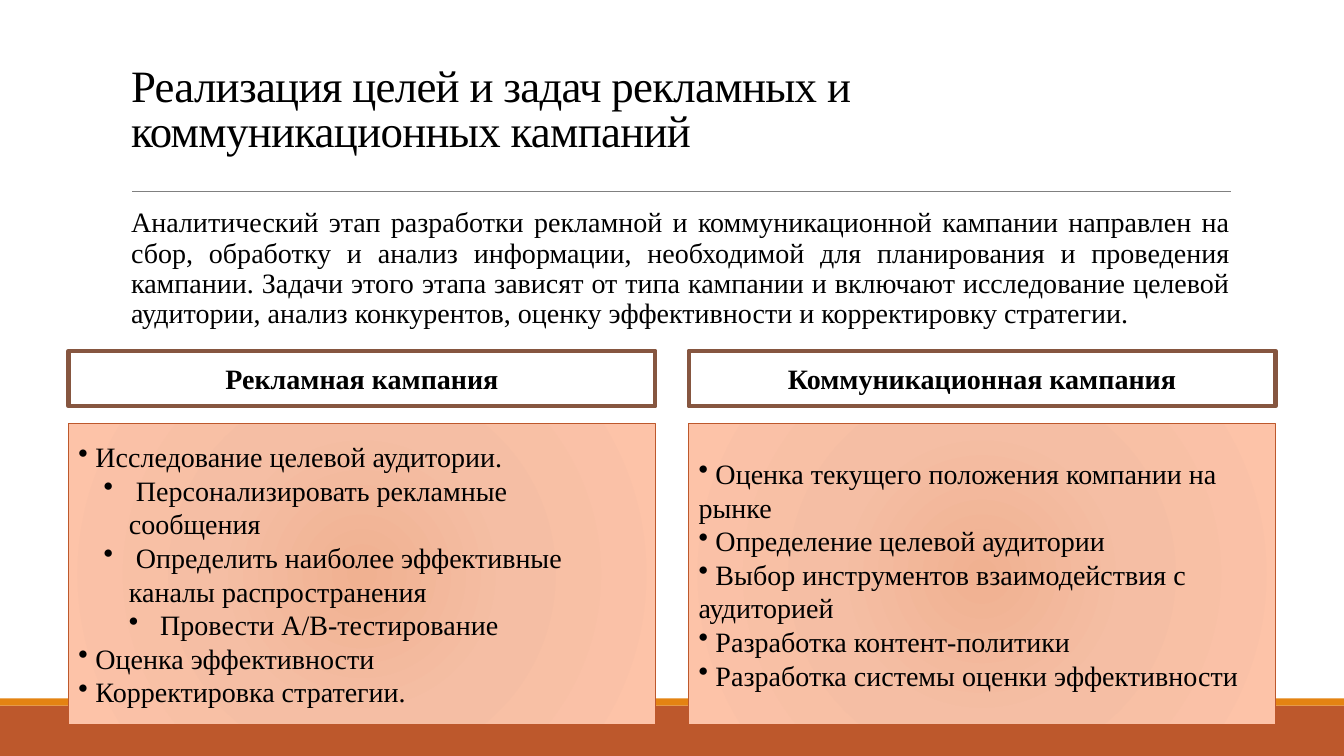
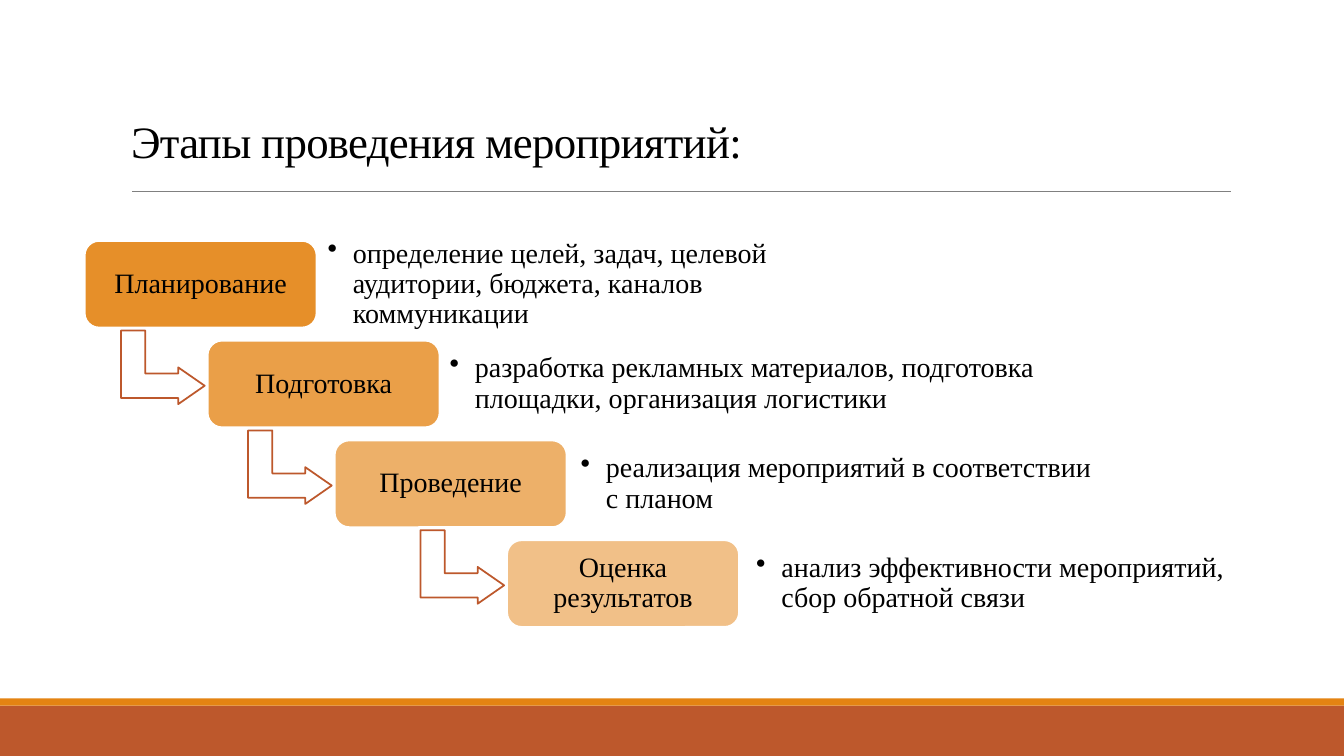
from pptx import Presentation
from pptx.dml.color import RGBColor
from pptx.enum.shapes import MSO_CONNECTOR, MSO_SHAPE
from pptx.enum.text import MSO_ANCHOR, MSO_AUTO_SIZE, PP_ALIGN
from pptx.oxml import parse_xml
from pptx.oxml.ns import nsdecls, qn
from pptx.util import Inches, Pt

RECT, ROUND = MSO_SHAPE.RECTANGLE, MSO_SHAPE.ROUNDED_RECTANGLE
ARROW = MSO_SHAPE.BENT_UP_ARROW
LINE = MSO_CONNECTOR.STRAIGHT
LEFT, CENTER, JUST = PP_ALIGN.LEFT, PP_ALIGN.CENTER, PP_ALIGN.JUSTIFY
TOP, MIDDLE, BOTTOM = MSO_ANCHOR.TOP, MSO_ANCHOR.MIDDLE, MSO_ANCHOR.BOTTOM
FIXED = MSO_AUTO_SIZE.NONE

COLORS = {
    "rust": "BD582C", "orange": "E48312", "brown": "865640",
    "gray": "808080", "white": "FFFFFF", "black": "000000",
}
GLOW = [(0, "F0B191"), (45, "F5BEA4"), (100, "FDC3A8")]

TEXT = {"name": "Times New Roman", "size": Pt(20)}
HEAD = TEXT | {"size": Pt(32)}
BOLD = TEXT | {"bold": True}

# Bullet kinds: level, left margin, first-line indent
FLAT, SUB, DEEP, NOTE = (0, 0, 0), (1, 0.5, -0.25), (1, 0.81, -0.31), (1, 0.25, -0.25)

INTRO = (
    "Аналитический этап разработки рекламной и коммуникационной кампании "
    "направлен на сбор, обработку и анализ информации, необходимой для "
    "планирования и проведения кампании. Задачи этого этапа зависят от типа "
    "кампании и включают исследование целевой аудитории, анализ конкурентов, "
    "оценку эффективности и корректировку стратегии."
)
PANELS = [
    ("Рекламная кампания", [
        (" Исследование целевой аудитории.", FLAT),
        (" Персонализировать рекламные сообщения", SUB),
        (" Определить наиболее эффективные каналы распространения", SUB),
        ("Провести A/B-тестирование", DEEP),
        (" Оценка эффективности", FLAT),
        (" Корректировка стратегии.", FLAT),
    ]),
    ("Коммуникационная кампания", [
        (" Оценка текущего положения компании на рынке", FLAT),
        (" Определение целевой аудитории", FLAT),
        (" Выбор инструментов взаимодействия с аудиторией", FLAT),
        (" Разработка контент-политики", FLAT),
        (" Разработка системы оценки эффективности", FLAT),
    ]),
]
# Step: label, left, opacity, note left, note width, note
STEPS = [
    ("Планирование", 0.84, 90, 3.17, 5.39,
     "определение целей, задач, целевой аудитории, бюджета, каналов коммуникации"),
    ("Подготовка", 2.06, 77, 4.38, 6,
     "разработка рекламных материалов, подготовка площадки, организация логистики"),
    ("Проведение", 3.32, 63, 5.68, 5.3,
     "реализация мероприятий в соответствии с планом"),
    ("Оценка результатов", 5.03, 50, 7.42, 4.93,
     "анализ эффективности мероприятий, сбор обратной связи"),
]


def color(name):
    return RGBColor.from_string(COLORS[name])


def apply(obj, values):
    for key, value in values.items():
        setattr(obj, key, value)


def place(shape, box):
    keys = ("left", "top", "width", "height")
    apply(shape, dict(zip(keys, map(Inches, box))))


def indent(para, kind, mark):
    """Set the level, margins and bullet of a paragraph."""
    level, margin, first = kind
    para.level = level
    props = para._p.get_or_add_pPr()
    props.set("marL", str(Inches(margin)))
    props.set("indent", str(Inches(first)))
    tag = f'a:buChar {nsdecls("a")} char="{mark}"' if mark else f'a:buNone {nsdecls("a")}'
    props.append(parse_xml(f"<{tag}/>"))


def write(shape, items, font=TEXT, align=LEFT, anchor=MIDDLE, space=None, mark="•", pad=None):
    """Fill a shape with (text, bullet kind) items; kind None has no bullet."""
    frame = shape.text_frame
    apply(frame, {"word_wrap": True, "auto_size": FIXED, "vertical_anchor": anchor})
    if pad is not None:
        across, down = pad
        apply(frame, {"margin_left": Inches(across), "margin_right": Inches(across),
                      "margin_top": Inches(down), "margin_bottom": Inches(down)})
    for i, (text, kind) in enumerate(items):
        para = frame.add_paragraph() if i else frame.paragraphs[0]
        if kind:
            indent(para, kind, mark)
        apply(para, {"alignment": align, "line_spacing": space, "space_before": Pt(0)})
        run = para.add_run()
        run.text = text
        apply(run.font, font)
        run.font.color.rgb = color("black")


def draw(slide, form, box, fill=None, line=None, width=1.0):
    """Add a preset shape with a plain fill and outline."""
    shape = slide.shapes.add_shape(form, *map(Inches, box))
    shape.shadow.inherit = False
    if fill:
        shape.fill.solid()
        shape.fill.fore_color.rgb = color(fill)
    if line:
        shape.line.color.rgb = color(line)
        shape.line.width = Pt(width)
    else:
        shape.line.fill.background()
    return shape


def glow(shape):
    """Give a shape the radial gradient."""
    stops = "".join(f'<a:gs pos="{at * 1000}"><a:srgbClr val="{tone}"/></a:gs>'
                    for at, tone in GLOW)
    sides = " ".join(f'{side}="100000"' for side in "ltrb")
    shape.fill.background()
    props = shape.element.spPr
    props.replace(props.find(qn("a:noFill")), parse_xml(
        f'<a:gradFill {nsdecls("a")} rotWithShape="1"><a:gsLst>{stops}</a:gsLst>'
        f'<a:path path="circle"><a:fillToRect {sides}/></a:path></a:gradFill>'))


def fade(shape, share):
    """Set the opacity of a solid fill, in percent."""
    tone = shape.element.spPr.find(qn("a:solidFill")).find(qn("a:srgbClr"))
    tone.append(parse_xml(f'<a:alpha {nsdecls("a")} val="{share * 1000}"/>'))


def share(prs, slide):
    """Move the bands and the title rule to the slide master."""
    rule = slide.shapes.add_connector(LINE, *map(Inches, (1.31, 1.9, 12.21, 1.9)))
    rule.line.color.rgb = color("gray")
    rule.line.width = Pt(0.5)
    rule.element.spPr.append(parse_xml(f'<a:effectLst {nsdecls("a")}/>'))
    bands = [draw(slide, RECT, (0, 7, 13.33, 0.5), "rust"),
             draw(slide, RECT, (0, 6.93, 13.33, 0.07), "orange")]
    for num, part in enumerate([*bands, rule], 20):
        part.element.xpath(".//p:cNvPr")[0].set("id", str(num))
        prs.slide_master.shapes.element.append(part.element)


def title(slide, text, height, anchor):
    shape = slide.shapes.title
    place(shape, (1.2, 0.31, 11, height))
    write(shape, [(text, None)], HEAD, anchor=anchor, space=0.85)
    run = shape.text_frame.paragraphs[0].runs[0]
    run._r.get_or_add_rPr().set("spc", "-50")


def goals(slide):
    title(slide, "Реализация целей и задач рекламных и коммуникационных кампаний", 1.59, MIDDLE)
    body = slide.placeholders[1]
    place(body, (1.2, 2.02, 11, 1.46))
    write(body, [(INTRO, (0, 0.1, 0))], align=JUST, anchor=TOP, space=0.9,
          mark=None, pad=(0, 0.05))
    # Two columns: list panel and heading
    for col, (name, items) in enumerate(PANELS):
        left = 0.68 + 6.15 * col
        panel = draw(slide, RECT, (left, 4.2, 5.82, 2.99), line="rust")
        glow(panel)
        write(panel, items)
        head = draw(slide, RECT, (left, 3.48, 5.82, 0.55), "white", "brown", 3)
        write(head, [(name, None)], BOLD, CENTER)


def stages(slide):
    title(slide, "Этапы проведения мероприятий:", 1.4, BOTTOM)
    for row, (name, left, solid, start, width, note) in enumerate(STEPS):
        top = 2.39 + 0.99 * row
        # Arrow from the step above
        if row:
            arrow = draw(slide, ARROW, (left - 0.81, top - 0.15, 0.73, 0.83),
                         "white", "rust", 1.25)
            arrow.rotation = 90
            for i, value in enumerate((0.33, 0.25, 0.36)):
                arrow.adjustments[i] = value
        # Step box and its note
        step = draw(slide, ROUND, (left, top, 2.3, 0.86), "orange", "white", 1.25)
        fade(step, solid)
        write(step, [(name, None)], align=CENTER, space=0.9)
        side = slide.shapes.add_textbox(*map(Inches, (start, top + 0.08, width, 0.7)))
        write(side, [(note, NOTE)], space=0.9, pad=(0.08, 0.08))


def main():
    prs = Presentation()
    prs.slide_width, prs.slide_height = Inches(13.33), Inches(7.5)
    first = prs.slides.add_slide(prs.slide_layouts[1])
    share(prs, first)
    goals(first)
    stages(prs.slides.add_slide(prs.slide_layouts[5]))
    prs.save("out.pptx")


if __name__ == "__main__":
    main()
